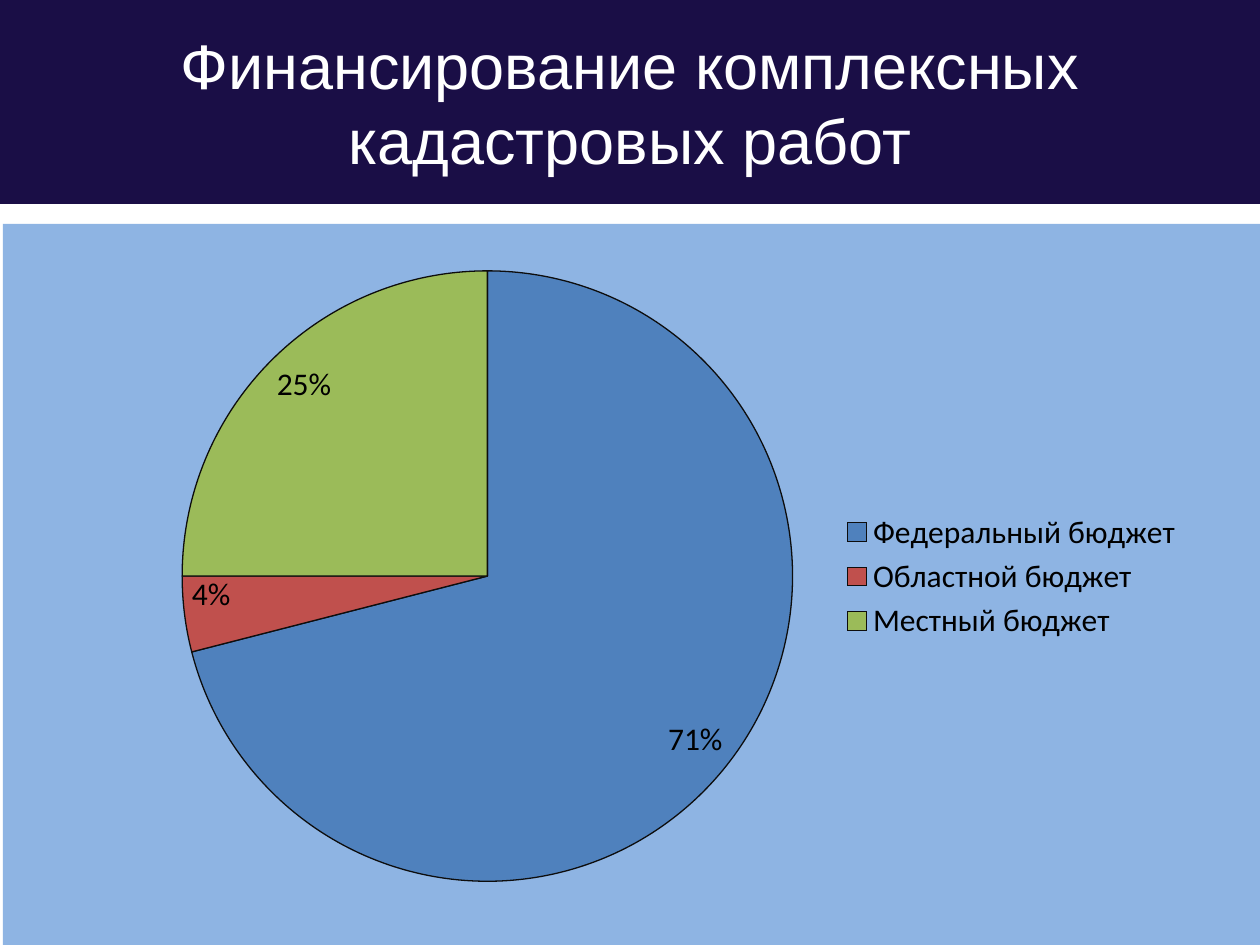
from pptx import Presentation
from pptx.chart.data import CategoryChartData
from pptx.dml.color import RGBColor
from pptx.enum.chart import XL_CHART_TYPE, XL_LABEL_POSITION, XL_LEGEND_POSITION
from pptx.enum.shapes import MSO_SHAPE
from pptx.enum.text import MSO_ANCHOR, PP_ALIGN
from pptx.oxml import parse_xml
from pptx.oxml.ns import nsdecls, qn
from pptx.util import Emu, Pt

WIDTH, HEIGHT = 1260, 945


def px(n):
    return Emu(round(n * 914400 / 126))


def color(value):
    return RGBColor.from_string(value)


class Deck:
    """Holds the style and the current slide."""
    navy, sky, white, black, outline = "1A0E46", "8EB4E3", "FFFFFF", "000000", "0D0D0D"
    slices = ["4F81BD", "C0504D", "9BBB59"]
    title_font, chart_font = "Arial", "Calibri"

    def __init__(self):
        self.prs = Presentation()
        self.prs.slide_width, self.prs.slide_height = px(WIDTH), px(HEIGHT)
        self.s = self.prs.slides.add_slide(self.prs.slide_layouts[6])

    def rect(self, x, y, w, h, fill):
        sp = self.s.shapes.add_shape(MSO_SHAPE.RECTANGLE, px(x), px(y), px(w), px(h))
        sp.shadow.inherit = False
        sp.fill.solid()
        sp.fill.fore_color.rgb = color(fill)
        sp.line.fill.background()
        return sp

    def title(self, x, y, w, h, text):
        tf = self.rect(x, y, w, h, self.navy).text_frame
        tf.word_wrap = True
        tf.vertical_anchor = MSO_ANCHOR.MIDDLE
        p = tf.paragraphs[0]
        p.alignment = PP_ALIGN.CENTER
        r = p.add_run()
        r.text = text
        r.font.name, r.font.size = self.title_font, Pt(36)
        r.font.color.rgb = color(self.white)

    def pie(self, x, y, w, h, name, shares, plot):
        """Add a pie chart; plot is the box of the pie inside the chart."""
        data = CategoryChartData()
        data.categories = list(shares)
        data.add_series(name, list(shares.values()))
        chart = self.s.shapes.add_chart(
            XL_CHART_TYPE.PIE, px(x), px(y), px(w), px(h), data).chart
        chart.has_title = False
        chart.font.name, chart.font.size = self.chart_font, Pt(18)
        chart.font.color.rgb = color(self.black)
        chart.has_legend = True
        chart.legend.position = XL_LEGEND_POSITION.RIGHT
        chart.legend.include_in_layout = False

        pie = chart.plots[0]
        pie.vary_by_categories = True
        for i, fill in enumerate(self.slices):
            fmt = pie.series[0].points[i].format
            fmt.fill.solid()
            fmt.fill.fore_color.rgb = color(fill)
            fmt.line.color.rgb = color(self.outline)
            fmt.line.width = Pt(0.75)

        pie.has_data_labels = True
        labels = pie.data_labels
        labels.show_value, labels.show_percentage = False, True
        labels.number_format, labels.number_format_is_linked = "0%", False
        labels.position = XL_LABEL_POSITION.INSIDE_END
        self.place_plot(chart, [a / b for a, b in zip(plot, (w, h, w, h))])

    def place_plot(self, chart, box):
        area = chart._chartSpace.find(".//" + qn("c:plotArea"))
        for old in area.findall(qn("c:layout")):
            area.remove(old)
        sizes = "".join(f'<c:{k} val="{v:.3f}"/>' for k, v in zip("xywh", box))
        area.insert(0, parse_xml(
            f'<c:layout {nsdecls("c")}><c:manualLayout><c:layoutTarget val="inner"/>'
            '<c:xMode val="edge"/><c:yMode val="edge"/>'
            f'{sizes}</c:manualLayout></c:layout>'))


def main():
    deck = Deck()
    deck.title(0, 0, WIDTH, 204, "Финансирование комплексных кадастровых работ")
    deck.rect(3, 224, WIDTH, 721, deck.sky)
    shares = {"Федеральный бюджет": 71, "Областной бюджет": 4, "Местный бюджет": 25}
    deck.pie(94, 254, 1102, 645, "Series 1", shares, plot=(88, 17, 611, 611))
    deck.prs.save("out.pptx")


if __name__ == "__main__":
    main()
